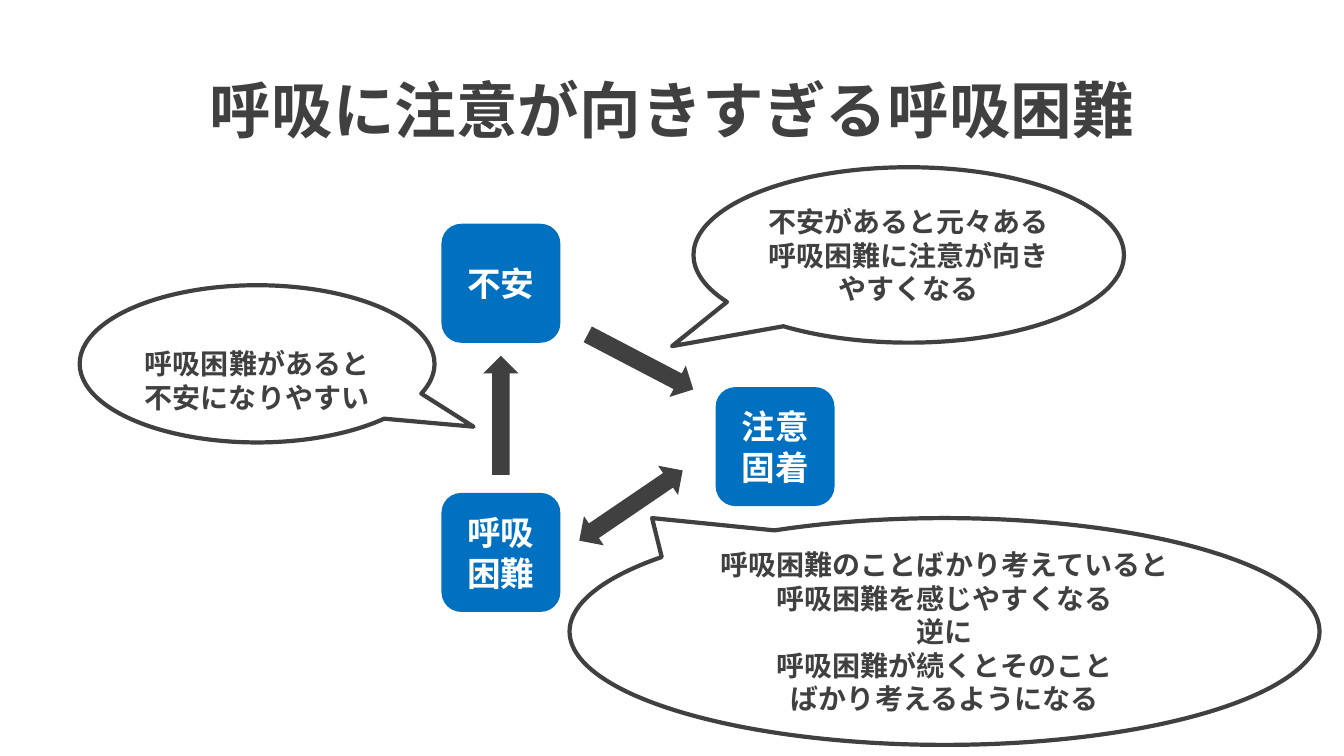
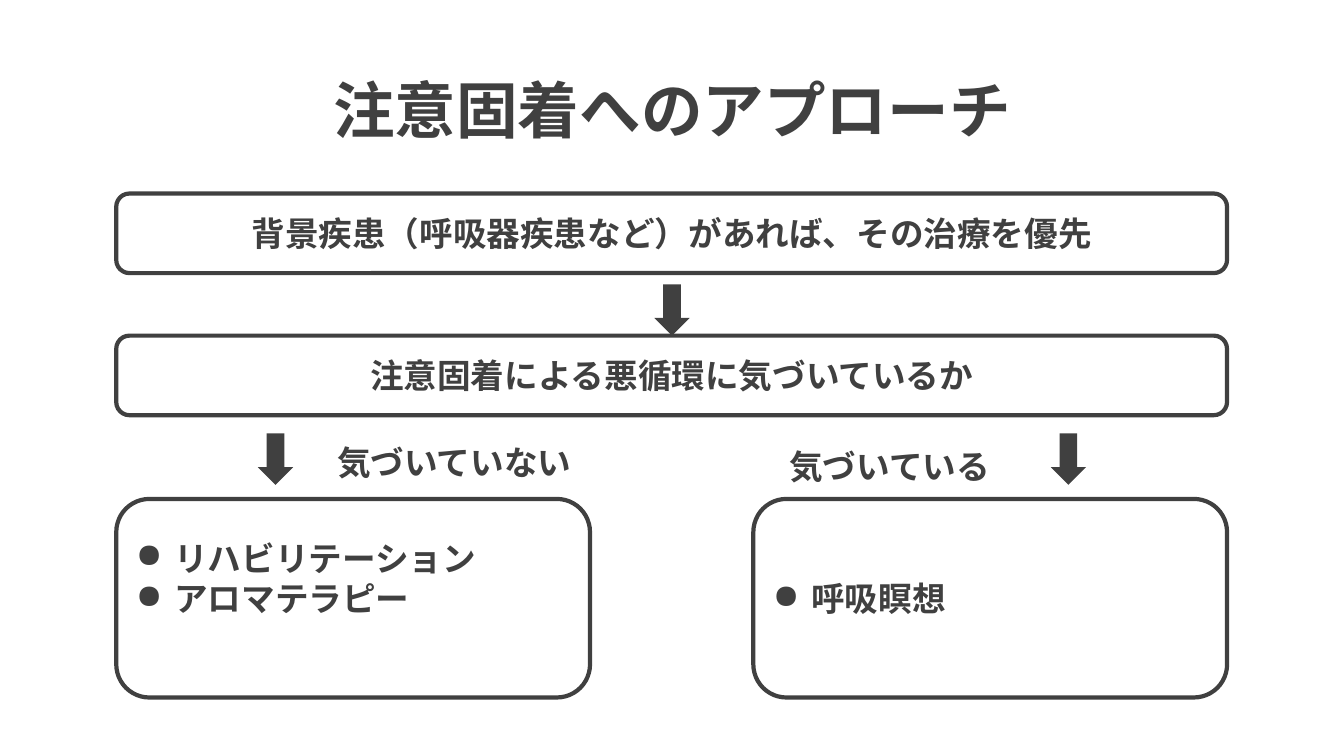
"""Build two slides on breathlessness and fixed attention."""
from lxml.etree import SubElement
from pptx import Presentation
from pptx.dml.color import RGBColor
from pptx.enum.shapes import MSO_SHAPE
from pptx.enum.text import MSO_ANCHOR, PP_ALIGN
from pptx.oxml.ns import qn
from pptx.util import Inches, Pt

COLOURS = {"ink": "404040", "blue": "0070C0", "white": "FFFFFF"}
FONT = "Noto Sans CJK JP"
TITLE_SIZE, BOX_SIZE, CALLOUT_SIZE = 44, 24, 20
ARROW_COLUMNS, ARROW_ROWS = 2.63, 4.67
BULLET_INDENT = Inches(0.38)


class Deck:
    """Hold the style and the current slide, on a grid of 100 columns by 100 rows."""

    def __init__(self):
        """Start an empty widescreen presentation."""
        self.presentation = Presentation()
        self.presentation.slide_width = Inches(13.33)
        self.presentation.slide_height = Inches(7.5)
        self.slide = None

    def columns(self, count):
        """Turn grid columns into a length."""
        return round(self.presentation.slide_width * count / 100)

    def rows(self, count):
        """Turn grid rows into a length."""
        return round(self.presentation.slide_height * count / 100)

    def place(self, left, top, width, height):
        """Turn a grid position into four lengths."""
        return self.columns(left), self.rows(top), self.columns(width), self.rows(height)

    def set_text(self, shape, text, size, colour="ink", align=PP_ALIGN.CENTER):
        """Set bold text, one paragraph a line, centred vertically."""
        frame = shape.text_frame
        frame.word_wrap = True
        frame.vertical_anchor = MSO_ANCHOR.MIDDLE
        frame.text = text
        for paragraph in frame.paragraphs:
            paragraph.alignment = align
            for run in paragraph.runs:
                run.font.name = FONT
                run.font.size = Pt(size)
                run.font.bold = True
                run.font.color.rgb = RGBColor.from_string(COLOURS[colour])
                SubElement(run.font._element, qn("a:ea"), typeface=FONT)
        return frame

    def add_slide(self, title):
        """Add a slide with its title placeholder."""
        self.slide = self.presentation.slides.add_slide(self.presentation.slide_layouts[5])
        shape = self.slide.shapes.title
        shape.left, shape.top, shape.width, shape.height = self.place(6.9, 5.33, 86.25, 19.33)
        self.set_text(shape, title, TITLE_SIZE).paragraphs[0].line_spacing = 0.9

    def shape(self, kind, position, fill=None, line=None):
        """Add a preset shape without a shadow."""
        shape = self.slide.shapes.add_shape(kind, *self.place(*position))
        shape.shadow.inherit = False
        if fill:
            shape.fill.solid()
            shape.fill.fore_color.rgb = RGBColor.from_string(COLOURS[fill])
        else:
            shape.fill.background()
        if line:
            shape.line.color.rgb = RGBColor.from_string(COLOURS[line])
            shape.line.width = Pt(3)
        else:
            shape.line.fill.background()
        return shape

    def node(self, left, top, text):
        """Add a blue square of the cycle."""
        shape = self.shape(MSO_SHAPE.ROUNDED_RECTANGLE, (left, top, 8.85, 15.75), "blue")
        self.set_text(shape, text, BOX_SIZE, "white")

    def panel(self, position, text, align=PP_ALIGN.CENTER):
        """Add an outlined white box."""
        shape = self.shape(MSO_SHAPE.ROUNDED_RECTANGLE, position, "white", "ink")
        return self.set_text(shape, text, BOX_SIZE, align=align)

    def bullet_panel(self, position, items, bottom_rows=0.67):
        """Add an outlined box with a bulleted list."""
        frame = self.panel(position, "\n".join(items), PP_ALIGN.LEFT)
        frame.margin_bottom = self.rows(bottom_rows)
        for paragraph in frame.paragraphs:
            properties = paragraph._p.get_or_add_pPr()
            properties.set("marL", str(BULLET_INDENT))
            properties.set("indent", str(-BULLET_INDENT))
            SubElement(properties, qn("a:buChar"), char="●")

    def callout(self, position, tip, text, top_rows=0.67):
        """Add an oval speech balloon pointing at the tip."""
        shape = self.shape(MSO_SHAPE.OVAL_CALLOUT, position, line="ink")
        shape.adjustments[0], shape.adjustments[1] = tip
        self.set_text(shape, text, CALLOUT_SIZE).margin_top = self.rows(top_rows)

    def arrow(self, kind, centre, width, height, rotation=0):
        """Add a block arrow around its centre."""
        column, row = centre
        position = column - width / 2, row - height / 2, width, height
        self.shape(kind, position, "ink").rotation = rotation

    def label(self, left, top, text):
        """Add a plain branch label."""
        box = self.slide.shapes.add_textbox(*self.place(left, top, 22.58, 7.87))
        self.set_text(box, text, BOX_SIZE)


def add_cycle(deck):
    """Show how anxiety, attention and breathlessness feed each other."""
    deck.add_slide("呼吸に注意が向きすぎる呼吸困難")
    for left, top, text in (
        (32.85, 29.6, "不安"),
        (53.25, 51.2, "注意固着"),
        (32.85, 65.2, "呼吸困難"),
    ):
        deck.node(left, top, text)
    deck.arrow(MSO_SHAPE.UP_ARROW, (37.27, 54.93), ARROW_COLUMNS, 15.75)
    deck.arrow(MSO_SHAPE.DOWN_ARROW, (47.66, 47.87), ARROW_COLUMNS, 15.75, 297.6)
    deck.arrow(MSO_SHAPE.LEFT_RIGHT_ARROW, (46.95, 66.87), 9.3, ARROW_ROWS, 325.8)
    deck.callout((5.93, 37.73, 26.4, 20.8), (0.61, 0.4),
                 "呼吸困難があると不安になりやすい", top_rows=5.07)
    deck.callout((51.6, 22.13, 32.03, 23.2), (-0.55, 0.52),
                 "不安があると元々ある呼吸困難に注意が向きやすくなる")
    deck.callout((42.38, 68.53, 55.8, 30), (-0.39, -0.5),
                 "呼吸困難のことばかり考えていると\n呼吸困難を感じやすくなる\n逆に\n"
                 "呼吸困難が続くとそのこと\nばかり考えるようになる")


def add_approach(deck):
    """Show the steps for treating fixed attention."""
    deck.add_slide("注意固着へのアプローチ")
    left, width, branch_width = 8.65, 82.65, 35.25
    for top, text in (
        (25.6, "背景疾患（呼吸器疾患など）があれば、その治療を優先"),
        (44.4, "注意固着による悪循環に気づいているか"),
    ):
        deck.panel((left, top, width, 10.53), text)
    for centre in ((50, 41), (20.5, 60.73), (79.5, 60.73)):
        deck.arrow(MSO_SHAPE.DOWN_ARROW, centre, ARROW_COLUMNS, 6.8)
    deck.bullet_panel((left, 66, branch_width, 26.27),
                      ("リハビリテーション", "アロマテラピー"), bottom_rows=6)
    deck.bullet_panel((left + width - branch_width, 66, branch_width, 26.27), ("呼吸瞑想",))
    deck.label(22.5, 57.2, "気づいていない")
    deck.label(54.9, 57.73, "気づいている")


def main():
    """Build and save the presentation."""
    deck = Deck()
    add_cycle(deck)
    add_approach(deck)
    deck.presentation.save("out.pptx")


if __name__ == "__main__":
    main()
